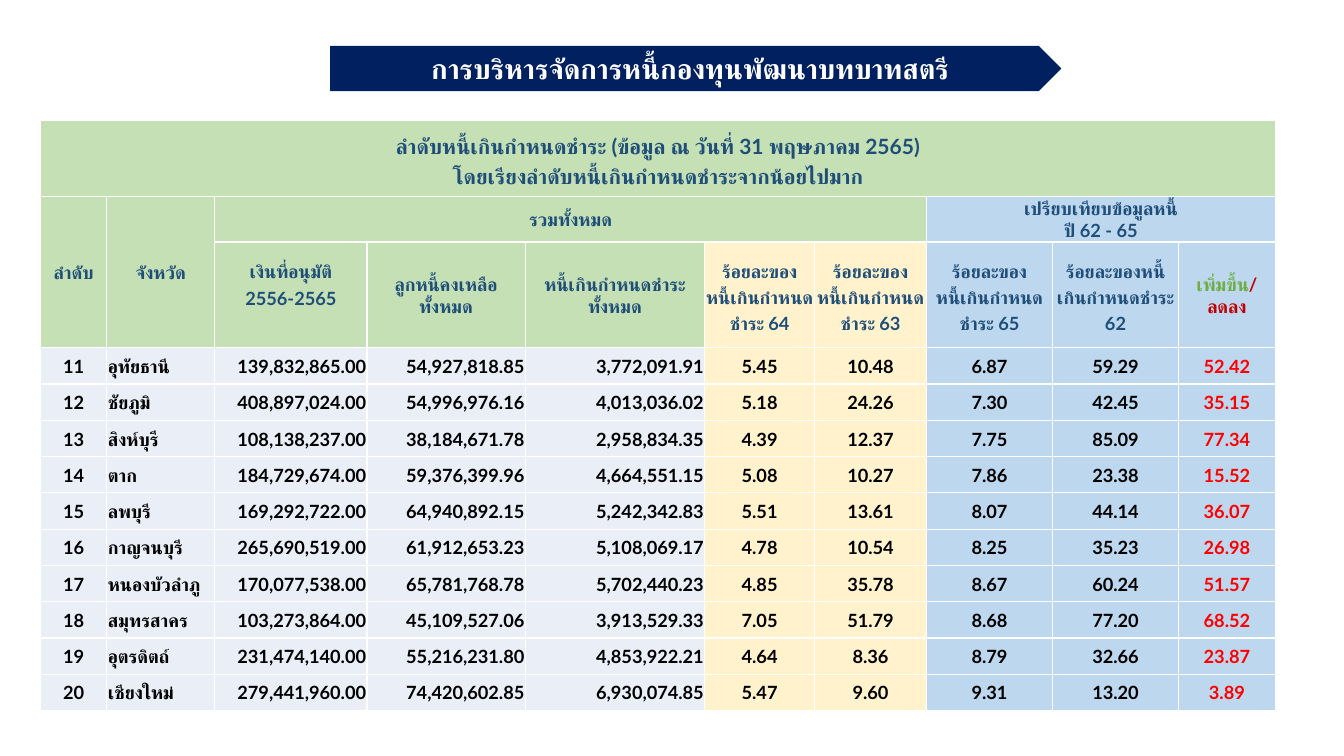
from dataclasses import dataclass

from lxml.etree import SubElement
from pptx import Presentation
from pptx.dml.color import RGBColor
from pptx.enum.shapes import MSO_SHAPE
from pptx.enum.text import MSO_ANCHOR, MSO_AUTO_SIZE, PP_ALIGN
from pptx.oxml import parse_xml
from pptx.oxml.ns import nsdecls, qn
from pptx.table import Table, _Cell
from pptx.text.text import TextFrame
from pptx.util import Inches, Pt

FONT = "Lato"
HUES = {
    "navy": "002060", "white": "FFFFFF", "ink": "1F4E79", "black": "000000",
    "red": "FF0000", "wine": "C00000", "leaf": "70AD47", "green": "C5E0B4",
    "cream": "FFF2CC", "sky": "BDD7EE", "pale": "EAEFF7",
}
LEFT, MID, RIGHT = PP_ALIGN.LEFT, PP_ALIGN.CENTER, PP_ALIGN.RIGHT


@dataclass
class Head:
    row: int
    col: int
    text: str
    fill: str
    rows: int = 1
    cols: int = 1
    size: int = 13
    lead: float = 1.0
    inks: tuple[str, ...] = ("ink",)
    base: float = 0


@dataclass
class Col:
    width: float
    fill: str
    align: PP_ALIGN = MID
    ink: str = "black"


COLS = [
    Col(0.66, "pale"), Col(1.07, "pale", LEFT), Col(1.51, "pale", RIGHT),
    Col(1.57, "pale", RIGHT), Col(1.78, "pale", RIGHT), Col(1.09, "cream"),
    Col(1.11, "cream"), Col(1.25, "sky"), Col(1.25, "sky"), Col(0.96, "sky", ink="red"),
]
SHARE = "ร้อยละของ\vหนี้เกินกำหนดชำระ "
HEADS = [
    Head(0, 0, "ลำดับหนี้เกินกำหนดชำระ (ข้อมูล ณ วันที่ 31 พฤษภาคม 2565)\n"
         "โดยเรียงลำดับหนี้เกินกำหนดชำระจากน้อยไปมาก", "green", cols=10, size=15, lead=1.2),
    Head(1, 0, "ลำดับ", "green", rows=2),
    Head(1, 1, "จังหวัด", "green", rows=2),
    Head(1, 2, "รวมทั้งหมด", "green", cols=5),
    Head(1, 7, "เปรียบเทียบข้อมูลหนี้\nปี 62 - 65", "sky", cols=3),
    Head(2, 2, "เงินที่อนุมัติ\v2556-2565", "green", lead=1.2, base=0.25),
    Head(2, 3, "ลูกหนี้คงเหลือทั้งหมด", "green"),
    Head(2, 4, "หนี้เกินกำหนดชำระทั้งหมด", "green"),
    Head(2, 5, SHARE + "64", "cream", lead=1.2),
    Head(2, 6, SHARE + "63", "cream", lead=1.2),
    Head(2, 7, SHARE + "65", "sky", lead=1.2),
    Head(2, 8, "ร้อยละของหนี้เกินกำหนดชำระ 62", "sky", lead=1.2),
    Head(2, 9, "เพิ่มขึ้น|/ลดลง", "sky", inks=("leaf", "wine")),
]
ROWS = [
    ("11", "อุทัยธานี", "139,832,865.00", "54,927,818.85", "3,772,091.91", "5.45", "10.48", "6.87", "59.29", "52.42"),
    ("12", "ชัยภูมิ", "408,897,024.00", "54,996,976.16", "4,013,036.02", "5.18", "24.26", "7.30", "42.45", "35.15"),
    ("13", "สิงห์บุรี", "108,138,237.00", "38,184,671.78", "2,958,834.35", "4.39", "12.37", "7.75", "85.09", "77.34"),
    ("14", "ตาก", "184,729,674.00", "59,376,399.96", "4,664,551.15", "5.08", "10.27", "7.86", "23.38", "15.52"),
    ("15", "ลพบุรี", "169,292,722.00", "64,940,892.15", "5,242,342.83", "5.51", "13.61", "8.07", "44.14", "36.07"),
    ("16", "กาญจนบุรี", "265,690,519.00", "61,912,653.23", "5,108,069.17", "4.78", "10.54", "8.25", "35.23", "26.98"),
    ("17", "หนองบัวลำภู", "170,077,538.00", "65,781,768.78", "5,702,440.23", "4.85", "35.78", "8.67", "60.24", "51.57"),
    ("18", "สมุทรสาคร", "103,273,864.00", "45,109,527.06", "3,913,529.33", "7.05", "51.79", "8.68", "77.20", "68.52"),
    ("19", "อุตรดิตถ์", "231,474,140.00", "55,216,231.80", "4,853,922.21", "4.64", "8.36", "8.79", "32.66", "23.87"),
    ("20", "เชียงใหม่", "279,441,960.00", "74,420,602.85", "6,930,074.85", "5.47", "9.60", "9.31", "13.20", "3.89"),
]
TALL = [0.76, 0.45, 1.05] + [0.36] * len(ROWS)


def tint(name: str) -> RGBColor:
    return RGBColor.from_string(HUES[name])


def write(frame: TextFrame, text: str, *, size: int = 13, inks: tuple[str, ...] = ("black",),
          align: PP_ALIGN = MID, lead: float = 1.0) -> None:
    for at, line in enumerate(text.split("\n")):
        para = frame.add_paragraph() if at else frame.paragraphs[0]
        para.alignment = align
        para.line_spacing = lead
        for part, ink in zip(line.split("|"), inks):
            for turn, bit in enumerate(part.split("\v")):
                if turn:
                    para.add_line_break()
                    gap = para._p.findall(qn("a:br"))[-1]
                    SubElement(gap, qn("a:rPr"), sz=str(size * 100), b="1")
                run = para.add_run()
                run.text = bit
                run.font.size = Pt(size)
                run.font.bold = True
                run.font.name = FONT
                run.font.color.rgb = tint(ink)
                SubElement(run._r.rPr, qn("a:cs"), typeface=FONT)


def paint(cell: _Cell, fill: str) -> None:
    cell.fill.solid()
    cell.fill.fore_color.rgb = tint(fill)
    cell.vertical_anchor = MSO_ANCHOR.MIDDLE
    cell.margin_left = cell.margin_right = cell.margin_top = Inches(0.01)
    cell.margin_bottom = 0
    for at, side in enumerate("LRTB"):
        edge = parse_xml(
            f'<a:ln{side} {nsdecls("a")} w="{Pt(1)}"><a:solidFill>'
            f'<a:srgbClr val="{HUES["white"]}"/></a:solidFill></a:ln{side}>')
        cell._tc.tcPr.insert(at, edge)


def draw_head(grid: Table, head: Head) -> None:
    last_row, last_col = head.row + head.rows, head.col + head.cols
    for row in range(head.row, last_row):
        for col in range(head.col, last_col):
            paint(grid.cell(row, col), head.fill)
    cell = grid.cell(head.row, head.col)
    if head.rows * head.cols > 1:
        cell.merge(grid.cell(last_row - 1, last_col - 1))
    cell.margin_bottom = Inches(head.base)
    write(cell.text_frame, head.text, size=head.size, inks=head.inks, lead=head.lead)


def main() -> None:
    deck = Presentation()
    deck.slide_width, deck.slide_height = Inches(13.33), Inches(7.5)
    shapes = deck.slides.add_slide(deck.slide_layouts[6]).shapes

    title = shapes.add_shape(
        MSO_SHAPE.PENTAGON, Inches(3.28), Inches(0.46), Inches(7.24), Inches(0.44))
    title.shadow.inherit = False
    title.fill.solid()
    title.fill.fore_color.rgb = title.line.color.rgb = tint("navy")
    title.line.width = Pt(0.75)
    title.text_frame.word_wrap = True
    title.text_frame.auto_size = MSO_AUTO_SIZE.SHAPE_TO_FIT_TEXT
    write(title.text_frame, "การบริหารจัดการหนี้กองทุนพัฒนาบทบาทสตรี", size=20, inks=("white",))

    grid = shapes.add_table(len(TALL), len(COLS), Inches(0.4), Inches(1.19),
                            Inches(12.23), Inches(5.85)).table
    grid.first_row = grid.horz_banding = False
    for col, spec in zip(grid.columns, COLS):
        col.width = Inches(spec.width)
    for row, tall in zip(grid.rows, TALL):
        row.height = Inches(tall)
    for head in HEADS:
        draw_head(grid, head)
    for at, row in enumerate(ROWS, 3):
        for col, (text, spec) in enumerate(zip(row, COLS)):
            cell = grid.cell(at, col)
            paint(cell, spec.fill)
            write(cell.text_frame, text, inks=(spec.ink,), align=spec.align)
    deck.save("out.pptx")


if __name__ == "__main__":
    main()
